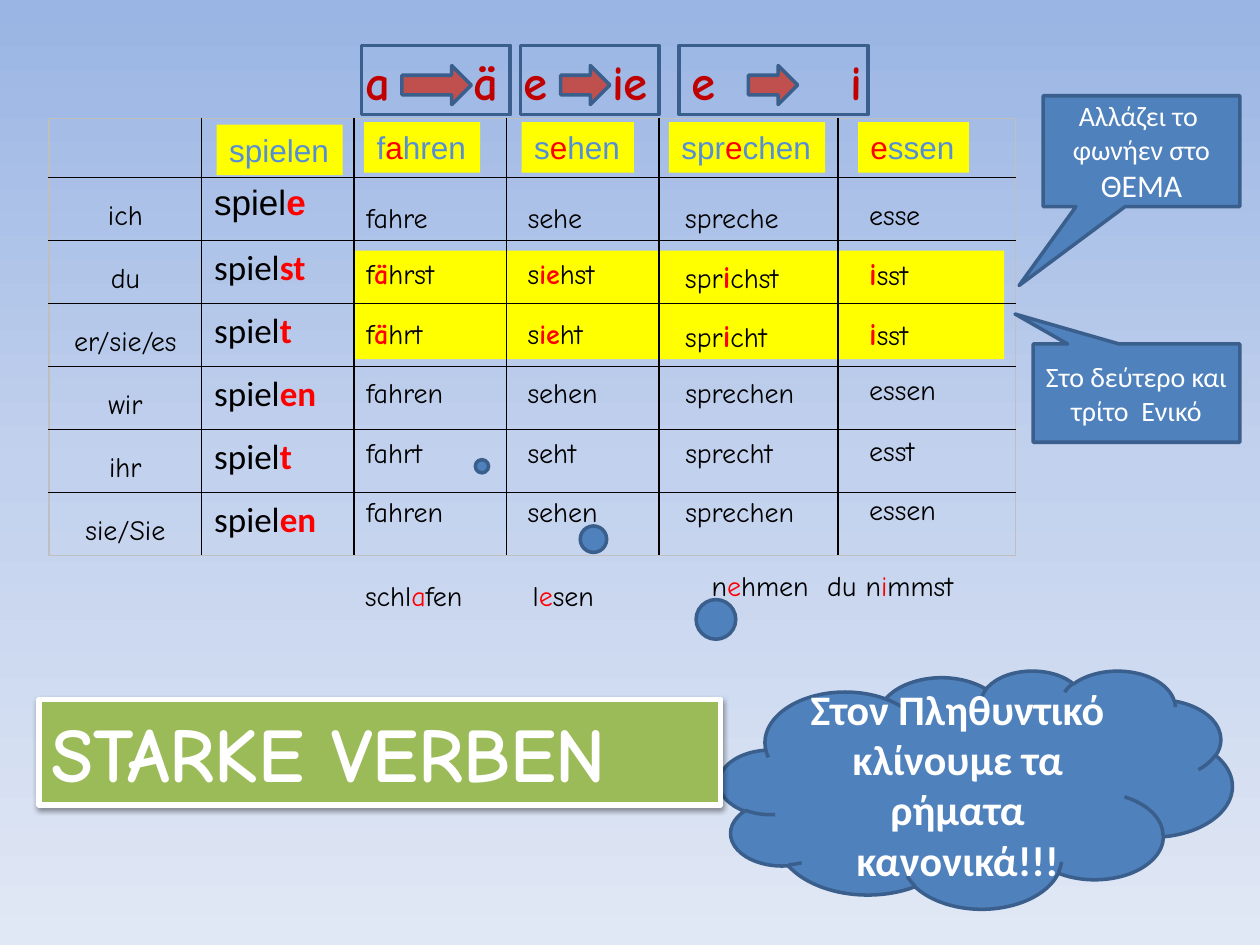
"""Build a slide on the vowel change of German strong verbs."""
from copy import deepcopy

from lxml.etree import SubElement
from pptx import Presentation
from pptx.dml.color import RGBColor
from pptx.enum.shapes import MSO_SHAPE
from pptx.enum.text import MSO_ANCHOR, MSO_AUTO_SIZE, PP_ALIGN
from pptx.oxml.ns import qn
from pptx.util import Inches, Pt

COLORS = {
    "black": "000000", "white": "FFFFFF", "red": "FF0000", "dark red": "C00000",
    "yellow": "FFFF00", "sky": "558ED5", "blue": "4F81BD", "edge": "3A5F8C",
    "brick": "C0504D", "green": "9BBB59", "grey": "BFBFBF",
    "top": "9AB5E4", "middle": "C2D1ED", "bottom": "E1E8F5",
}
WORD = {"name": "Comic Neue", "size": Pt(16), "bold": False, "color": "black"}
STRONG = {"color": "red", "bold": True}
RED = {"color": "red"}
VERB = {"name": "Arial", "size": Pt(18), "color": "sky"}
VOWEL = {"name": "Comic Neue", "size": Pt(28), "bold": True, "color": "dark red"}
NOTE = {"name": "Calibri", "size": Pt(16), "color": "white"}
TITLE = {"name": "Comic Neue", "size": Pt(44), "bold": True, "color": "white"}


def place(container, kind, at, fill=None, line=None, width=2):
    lengths = [Inches(value) for value in at]
    if kind is None:
        return container.add_textbox(*lengths)
    shape = container.add_shape(kind, *lengths)
    shape.shadow.inherit = False
    for part, color in ((shape.fill, fill), (shape.line.fill, line)):
        if color:
            part.solid()
            part.fore_color.rgb = RGBColor.from_string(COLORS[color])
        else:
            part.background()
    if line:
        shape.line.width = Pt(width)
    return shape


def write(frame, marked, base, accent=RED, align=PP_ALIGN.LEFT):
    para = frame.paragraphs[0]
    para.alignment = align
    for position, part in enumerate(marked.split("*")):
        if not part:
            continue
        span = para.add_run()
        span.text = part
        look = base | accent if position % 2 else base
        for key, value in look.items():
            if key == "color":
                span.font.color.rgb = RGBColor.from_string(COLORS[value])
            else:
                setattr(span.font, key, value)
    return para


deck = Presentation()
deck.slide_width, deck.slide_height = Inches(10), Inches(7.5)
page = deck.slides.add_slide(deck.slide_layouts[6])
shapes = page.shapes

backdrop = page.background.fill
backdrop.gradient()
backdrop.gradient_angle = 270
stop_list = page.element.find(".//" + qn("a:gsLst"))
stop_list.insert(1, deepcopy(stop_list[0]))
for stop, color, position in zip(backdrop.gradient_stops, ("top", "middle", "bottom"), (0, 0.5, 1)):
    stop.color.rgb = RGBColor.from_string(COLORS[color])
    stop.position = position

place(shapes, MSO_SHAPE.RECTANGLE, (2.81, 1.99, 5.16, 0.86), "yellow")

conjugation = [
    ("ich", "spiel*e*"), ("du", "spiel*st*"), ("er/sie/es", "spiel*t*"),
    ("wir", "spiel*en*"), ("ihr", "spiel*t*"), ("sie/Sie", "spiel*en*"),
]
table = shapes.add_table(7, 6, Inches(0.39), Inches(0.94), Inches(7.67), Inches(3.47)).table
table.first_row = table.horz_banding = False
for column, width in zip(table.columns, (1.21, 1.21, 1.21, 1.21, 1.42, 1.41)):
    column.width = Inches(width)
for index, row in enumerate(table.rows):
    row.height = Inches(0.5 if index else 0.47)
    for number, cell in enumerate(row.cells):
        outer = {"L": number == 0, "R": number == 5, "T": index == 0, "B": index == 6}
        for side, is_outer in outer.items():
            border = SubElement(cell._tc.get_or_add_tcPr(), qn(f"a:ln{side}"), w=str(Pt(1)))
            paint = SubElement(border, qn("a:solidFill"))
            SubElement(paint, qn("a:srgbClr"), val=COLORS["grey" if is_outer else "black"])
        cell.fill.background()
for index, (pronoun, form) in enumerate(conjugation, 1):
    para = write(table.cell(index, 0).text_frame, pronoun, WORD, align=PP_ALIGN.CENTER)
    para.line_spacing = 1.5
    font = "Arial" if index == 1 else "Calibri"
    write(table.cell(index, 1).text_frame, form, WORD | {"name": font, "size": Pt(20)}, STRONG)

verbs = [
    ("spielen", 1.72, 0.99, 1), ("f*a*hren", 2.89, 0.97, 0.92), ("s*e*hen", 4.14, 0.97, 0.89),
    ("spr*e*chen", 5.31, 0.97, 1.24), ("*e*ssen", 6.81, 0.97, 0.88),
]
for verb, left, top, width in verbs:
    label = place(shapes, MSO_SHAPE.RECTANGLE, (left, top, width, 0.4), "yellow")
    label.text_frame.word_wrap = False
    label.text_frame.vertical_anchor = MSO_ANCHOR.TOP
    write(label.text_frame, verb, VERB)

tops = (1.54, 1.99, 2.46, 2.93, 3.41, 3.88)
form_columns = [
    (2.81, 0, 16, ("fahre", "f*ä*hrst", "f*ä*hrt", "fahren", "fahrt", "fahren"),
     (0.79, 0.89, 0.79, 0.91, 0.79, 0.91)),
    (4.09, 0, 16, ("sehe", "s*ie*hst", "s*ie*ht", "sehen", "seht", "sehen"),
     (0.69, 0.84, 0.73, 0.8, 0.67, 0.8)),
    (5.34, 0, 18, ("spreche", "spr*i*chst", "spr*i*cht", "sprechen", "sprecht", "sprechen"),
     (1.03, 1.07, 0.96, 1.15, 1.01, 1.15)),
    (6.8, -0.02, 18, ("esse", "*i*sst", "*i*sst", "essen", "esst", "essen"),
     (0.67, 0.6, 0.6, 0.78, 0.65, 0.78)),
]
for left, shift, size, forms, widths in form_columns:
    group = shapes.add_group_shape()
    for form, top, width in zip(forms, tops, widths):
        height = 0.4 if "*" in form and size == 18 else 0.37
        box = place(group.shapes, None, (left, top + shift, width, height))
        box.text_frame.word_wrap = False
        box.text_frame.auto_size = MSO_AUTO_SIZE.SHAPE_TO_FIT_TEXT
        write(box.text_frame, form, WORD, STRONG | {"size": Pt(size)})

callouts = [
    (MSO_SHAPE.RECTANGULAR_CALLOUT, (8.28, 0.76, 1.56, 0.88), (-0.623, 1.212),
     "Αλλάζει το  φωνήεν στο *ΘΕΜΑ*", NOTE),
    (MSO_SHAPE.RECTANGULAR_CALLOUT, (8.2, 2.73, 1.64, 0.78), (-0.588, -0.805),
     "Στο δεύτερο και τρίτο  Ενικό", NOTE),
    (MSO_SHAPE.CLOUD_CALLOUT, (5.71, 5.32, 4.07, 1.89), (-0.963, -1.357),
     "Στον Πληθυντικό κλίνουμε τα ρήματα κανονικά!!!", NOTE | {"size": Pt(24), "bold": True}),
]
for kind, at, tip, text, style in callouts:
    callout = place(shapes, kind, at, "blue", "edge")
    callout.adjustments[0], callout.adjustments[1] = tip
    callout.text_frame.word_wrap = True
    callout.text_frame.vertical_anchor = MSO_ANCHOR.MIDDLE
    write(callout.text_frame, text, style, {"size": Pt(18)}, PP_ALIGN.CENTER)

banner = place(shapes, MSO_SHAPE.RECTANGLE, (0.31, 5.55, 5.41, 0.84), "green", "white", 3)
banner.text_frame.word_wrap = True
banner.text_frame.vertical_anchor = MSO_ANCHOR.TOP
write(banner.text_frame, "STARKE VERBEN", TITLE)
effects = banner.element.spPr.find(qn("a:effectLst"))
shadow = SubElement(effects, qn("a:outerShdw"), blurRad=str(Pt(3.1)), dist=str(Pt(1.6)),
                    dir="5400000", rotWithShape="0")
shade = SubElement(shadow, qn("a:srgbClr"), val=COLORS["black"])
SubElement(shade, qn("a:alpha"), val="38000")

changes = [
    ((2.87, 1.18), (3.19, 0.55), (("a", 2.8, 0.49), ("ä", 3.66, 0.42))),
    ((4.13, 1.1), (4.45, 0.39), (("e", 4.06, 0.42), ("ie", 4.76, 0.6))),
    ((5.39, 1.5), (5.94, 0.39), (("e", 5.39, 0.42), ("i", 6.65, 0.38))),
]
for (frame_left, frame_width), (arrow_left, arrow_width), vowels in changes:
    group = shapes.add_group_shape()
    for vowel, left, width in vowels:
        box = place(group.shapes, None, (left, 0.36, width, 0.57))
        box.text_frame.word_wrap = True
        write(box.text_frame, vowel, VOWEL)
    place(group.shapes, MSO_SHAPE.RIGHT_ARROW, (arrow_left, 0.52, arrow_width, 0.31), "brick", "edge")
    place(group.shapes, MSO_SHAPE.RECTANGLE, (frame_left, 0.36, frame_width, 0.55), None, "edge")

examples = [
    ("schl*a*fen", 2.8, 4.54, 1.09), ("l*e*sen", 4.13, 4.54, 0.73),
    ("n*e*hmen  du n*i*mmst", 5.55, 4.46, 2.18),
]
for example, left, top, width in examples:
    box = place(shapes, None, (left, top, width, 0.37))
    box.text_frame.word_wrap = False
    box.text_frame.auto_size = MSO_AUTO_SIZE.SHAPE_TO_FIT_TEXT
    write(box.text_frame, example, WORD)

deck.save("out.pptx")
